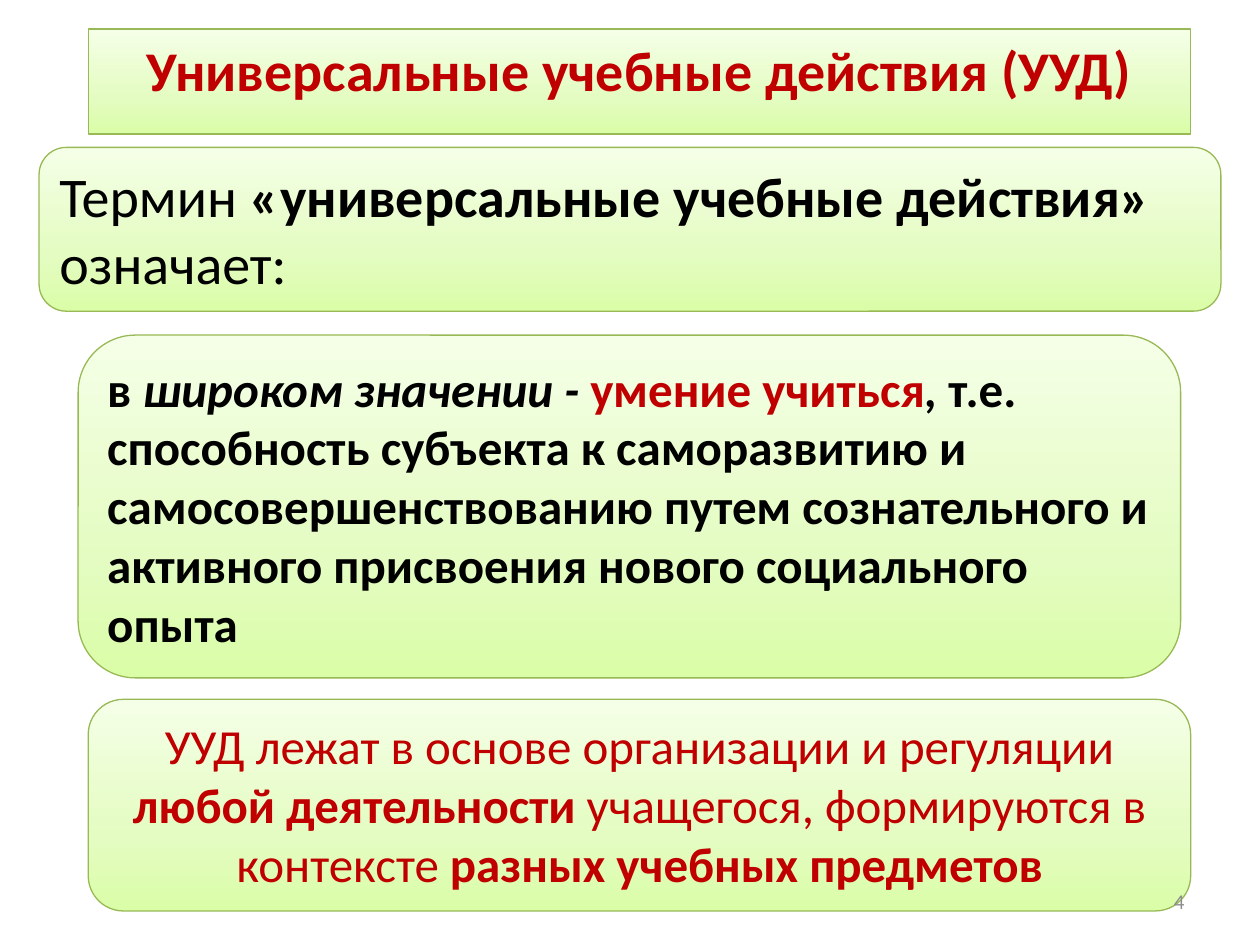
from copy import deepcopy
from dataclasses import dataclass

from lxml.etree import SubElement
from pptx import Presentation
from pptx.dml.color import RGBColor
from pptx.enum.shapes import MSO_SHAPE as Shape
from pptx.enum.text import MSO_ANCHOR as Anchor, MSO_AUTO_SIZE as Fit, PP_ALIGN as Align
from pptx.oxml.ns import qn
from pptx.util import Inches, Pt

FONT = "Calibri"
COLORS = {
    "base": "DAFDA7",
    "mid": "E4FCC2",
    "pale": "F5FFE7",
    "edge": "98B955",
    "red": "C00000",
    "black": "000000",
    "gray": "8C8C8C",
}
STOPS = [(0, "base"), (0.35, "mid"), (1, "pale")]


@dataclass
class Span:
    text: str
    color: str = "black"
    bold: bool = False
    italic: bool = False


@dataclass
class Panel:
    left: float
    top: float
    width: float
    height: float
    size: int
    align: Align
    spans: list[Span]


HEAD = Panel(0.7, 0.23, 8.75, 0.71, 32, Align.CENTER, [
    Span("Универсальные учебные действия (УУД)", "red", True),
])
PANELS = [
    Panel(0.31, 1.17, 9.38, 1.3, 32, Align.LEFT, [
        Span("Термин "),
        Span("«универсальные учебные действия»", bold=True),
        Span(" означает:"),
    ]),
    Panel(0.62, 2.66, 8.75, 2.72, 28, Align.LEFT, [
        Span("в ", bold=True),
        Span("широком значении - ", bold=True, italic=True),
        Span("умение учиться", "red", True),
        Span(", ", bold=True, italic=True),
        Span("т.е. способность субъекта к саморазвитию и "
             "самосовершенствованию путем сознательного и активного "
             "присвоения нового социального опыта", bold=True),
    ]),
    Panel(0.7, 5.55, 8.75, 1.68, 28, Align.CENTER, [
        Span("УУД лежат в основе организации и регуляции ", "red"),
        Span("любой деятельности ", "red", True),
        Span("учащегося, формируются в контексте ", "red"),
        Span("разных учебных предметов", "red", True),
    ]),
]
NUMBER = Panel(7.17, 6.95, 2.33, 0.4, 12, Align.RIGHT, [Span("4", "gray")])


def tint(name: str) -> RGBColor:
    return RGBColor.from_string(COLORS[name])


def bounds(panel: Panel) -> list[int]:
    return [Inches(n) for n in (panel.left, panel.top, panel.width, panel.height)]


def write(shape, panel: Panel, anchor: Anchor, fit: Fit) -> None:
    frame = shape.text_frame
    frame.word_wrap = True
    frame.auto_size = fit
    frame.vertical_anchor = anchor
    line = frame.paragraphs[0]
    line.alignment = panel.align
    for span in panel.spans:
        run = line.add_run()
        run.text = span.text
        font = run.font
        font.name = FONT
        font.size = Pt(panel.size)
        font.bold = span.bold
        font.italic = span.italic
        font.color.rgb = tint(span.color)


def paint(shape) -> None:
    shape.shadow.inherit = False
    fill = shape.fill
    fill.gradient()
    fill.gradient_angle = 90
    first = shape._element.spPr.find(".//" + qn("a:gs"))
    first.addnext(deepcopy(first))
    for stop, (place, name) in zip(fill.gradient_stops, STOPS):
        stop.position = place
        stop.color.rgb = tint(name)
    shape.line.color.rgb = tint("edge")
    shape.line.width = Pt(0.75)


def draw_head(slide, panel: Panel) -> None:
    title = slide.shapes.title
    title.left, title.top, title.width, title.height = bounds(panel)
    shell = SubElement(title._element.spPr, qn("a:prstGeom"), prst="roundRect")
    SubElement(shell, qn("a:avLst"))
    paint(title)
    write(title, panel, Anchor.TOP, Fit.SHAPE_TO_FIT_TEXT)


def draw_panel(slide, panel: Panel) -> None:
    box = slide.shapes.add_shape(Shape.ROUNDED_RECTANGLE, *bounds(panel))
    paint(box)
    write(box, panel, Anchor.TOP, Fit.SHAPE_TO_FIT_TEXT)


def main() -> None:
    deck = Presentation()
    deck.slide_width, deck.slide_height = Inches(10), Inches(7.5)
    slide = deck.slides.add_slide(deck.slide_layouts[5])
    draw_head(slide, HEAD)
    for panel in PANELS:
        draw_panel(slide, panel)
    label = slide.shapes.add_textbox(*bounds(NUMBER))
    write(label, NUMBER, Anchor.MIDDLE, Fit.NONE)
    deck.save("out.pptx")


if __name__ == "__main__":
    main()
